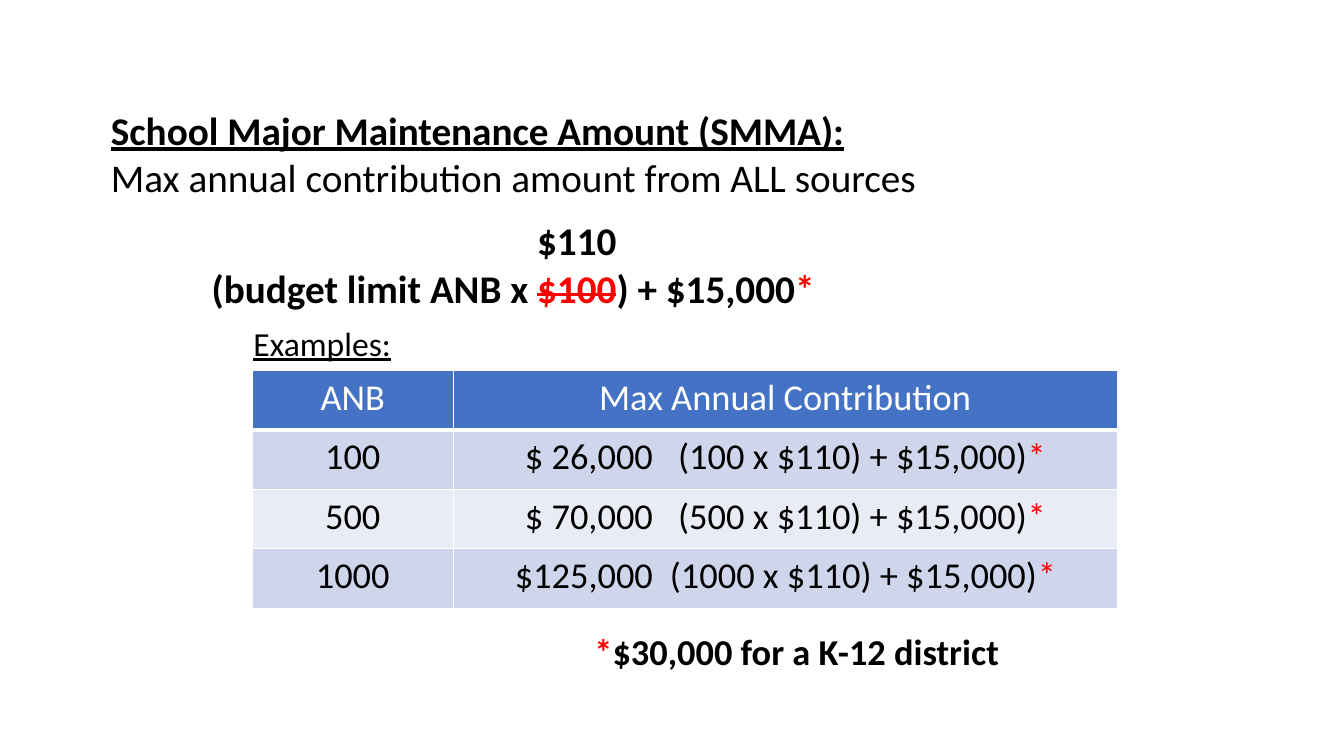
from dataclasses import dataclass

from lxml import etree
from pptx import Presentation
from pptx.dml.color import RGBColor
from pptx.enum.text import MSO_AUTO_SIZE, MSO_ANCHOR, PP_ALIGN
from pptx.oxml.ns import qn
from pptx.util import Pt

TITLE_AND_CONTENT = 1
NO_FIT = MSO_AUTO_SIZE.NONE
TOP = MSO_ANCHOR.TOP
LEFT, CENTER = PP_ALIGN.LEFT, PP_ALIGN.CENTER


@dataclass(frozen=True)
class Theme:
    font: str = "Calibri"
    ink: str = "000000"
    accent: str = "FF0000"
    white: str = "FFFFFF"
    header: str = "4472C4"
    bands: tuple = ("CFD5EA", "E9EBF5")
    body: int = 28
    table: int = 26
    label: int = 24


THEME = Theme()
STAR = ("*", {"color": THEME.accent})


def add_runs(paragraph, pieces, size, **shared):
    """Write (text, format) pieces; shared formats apply to every piece."""
    for text, extra in pieces:
        look = {"color": THEME.ink, **shared, **extra}
        run = paragraph.add_run()
        run.text = text
        run.font.color.rgb = RGBColor.from_string(look.pop("color"))
        xml_values = look.pop("xml", {})
        for name, value in {"name": THEME.font, "size": Pt(size), **look}.items():
            setattr(run.font, name, value)
        for name, value in xml_values.items():
            run._r.get_or_add_rPr().set(name, value)


def place(shape, box):
    for name, value in zip(("left", "top", "width", "height"), box):
        setattr(shape, name, Pt(value))


def format_plain(paragraph, indent=0, after=0):
    """Left-aligned paragraph without a bullet."""
    settings = {"alignment": LEFT, "line_spacing": 1.0,
                "space_before": Pt(0), "space_after": Pt(after)}
    for name, value in settings.items():
        setattr(paragraph, name, value)
    properties = paragraph._p.get_or_add_pPr()
    properties.set("marL", str(Pt(indent)))
    properties.set("indent", "0")
    etree.SubElement(properties, qn("a:buNone"))


def fill_rule(slide, box):
    """Definition and formula in the body placeholder."""
    rule = slide.placeholders[1]
    place(rule, box)
    frame = rule.text_frame
    frame.auto_size, frame.vertical_anchor = NO_FIT, TOP
    bold = {"bold": True}
    old_rate = {"color": THEME.accent, "xml": {"strike": "sngStrike"}}
    lines = [
        (0, 0, {"bold": True, "underline": True},
         [("School Major Maintenance Amount (SMMA):", {})]),
        (0, 12, {}, [("Max annual contribution amount from ALL sources", {})]),
        (304.5, 0, bold, [("$110", {})]),
        (72, 0, bold, [("(budget limit ANB x ", {}), ("$100", old_rate),
                       (") + $15,000", {}), STAR]),
    ]
    for number, (indent, after, look, pieces) in enumerate(lines):
        paragraph = frame.add_paragraph() if number else frame.paragraphs[0]
        format_plain(paragraph, indent, after)
        add_runs(paragraph, pieces, THEME.body, **look)


def add_note(slide, box, pieces, size, wrap=True, **look):
    note = slide.shapes.add_textbox(*map(Pt, box))
    note.text_frame.word_wrap = wrap
    add_runs(note.text_frame.paragraphs[0], pieces, size, **look)


def set_borders(cell, bottom):
    properties = cell._tc.get_or_add_tcPr()
    for side, width in (("L", 1), ("R", 1), ("T", 1), ("B", bottom)):
        line = etree.SubElement(properties, qn(f"a:ln{side}"), w=str(Pt(width)))
        paint = etree.SubElement(line, qn("a:solidFill"))
        etree.SubElement(paint, qn("a:srgbClr"), val=THEME.white)


def add_examples(slide, box):
    """Table of contributions worked out from the ANB."""
    heading = {"color": THEME.white, "bold": False}
    rows = [([("ANB", heading)], [("Max Annual Contribution", heading)])]
    for anb, gap in ((100, 12), (500, 12), (1000, 6)):
        total = anb * 110 + 15000
        rows.append((
            [(str(anb), {})],
            [(f"${total:>7,}", {}),
             (" ", {"xml": {"spc": str(gap * 100)}}),
             (f"({anb} x $110) + $15,000)", {}), STAR],
        ))

    table = slide.shapes.add_table(len(rows), 2, *map(Pt, box)).table
    anb_width = 144
    for column, width in zip(table.columns, (anb_width, box[2] - anb_width)):
        column.width = Pt(width)
    for number, contents in enumerate(rows):
        table.rows[number].height = Pt(box[3] / len(rows))
        color = THEME.bands[(number - 1) % 2] if number else THEME.header
        for cell, pieces in zip(table.rows[number].cells, contents):
            set_borders(cell, bottom=1 if number else 3)
            cell.fill.solid()
            cell.fill.fore_color.rgb = RGBColor.from_string(color)
            paragraph = cell.text_frame.paragraphs[0]
            paragraph.alignment = CENTER
            add_runs(paragraph, pieces, THEME.table)


def build_smma_slide(deck):
    slide = deck.slides.add_slide(deck.slide_layouts[TITLE_AND_CONTENT])
    empty_title = slide.shapes.title.element
    empty_title.getparent().remove(empty_title)

    # Rule
    fill_rule(slide, (72, 72, 828, 456))

    # Examples
    add_note(slide, (174, 227, 114, 36), [("Examples:", {})],
             THEME.label, wrap=False, underline=True)
    add_examples(slide, (180, 264.5, 618, 170))

    # Footnote
    add_note(slide, (417.5, 446, 312, 39),
             [STAR, ("$30,000 for a K-12 district", {})], THEME.table, bold=True)


def main():
    deck = Presentation()
    deck.slide_width, deck.slide_height = Pt(960), Pt(540)
    build_smma_slide(deck)
    deck.save("out.pptx")


if __name__ == "__main__":
    main()
